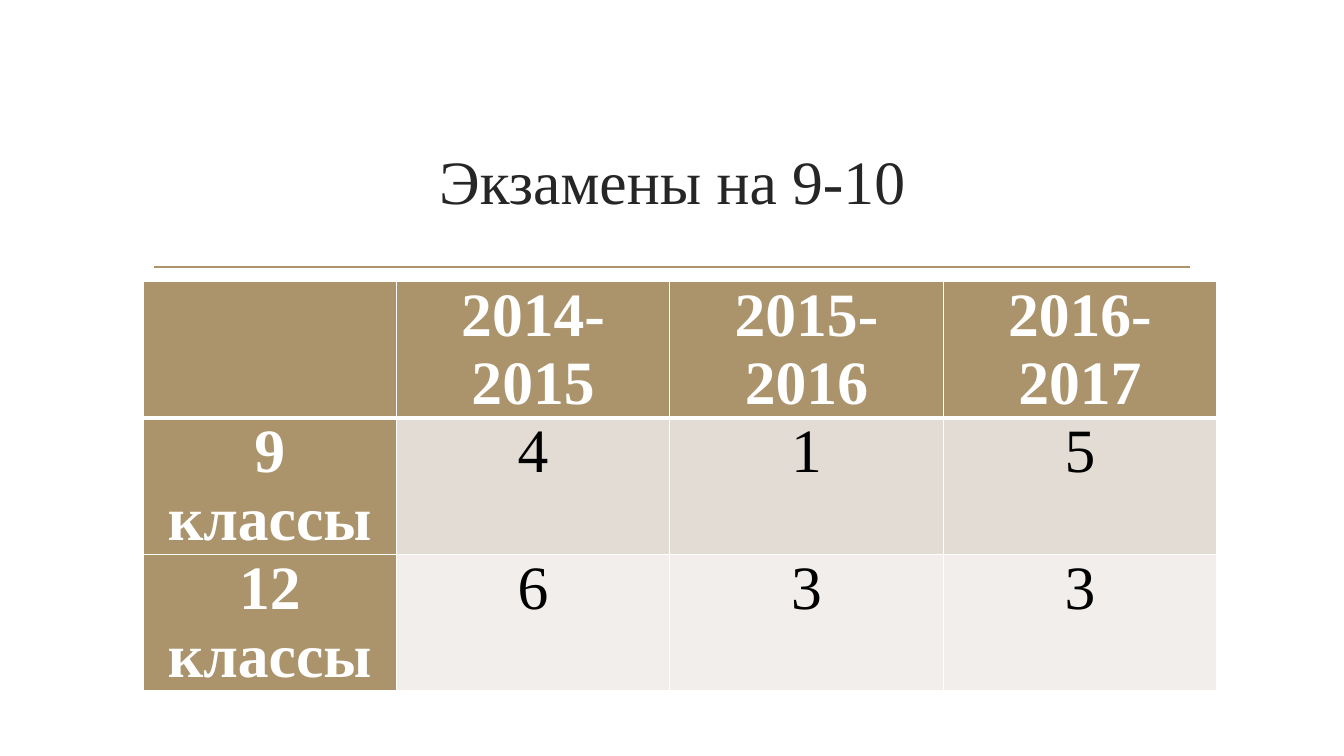
import pptx
import pptx.dml.color
import pptx.enum.shapes
import pptx.enum.text
import pptx.oxml
import pptx.oxml.ns
import pptx.util

Cm, Pt = pptx.util.Cm, pptx.util.Pt
CENTER = pptx.enum.text.PP_ALIGN.CENTER
FONT = "Times New Roman"
COLORS = {
    "title": "262626",
    "accent": "AB946B",
    "band_dark": "E2DCD4",
    "band_light": "F1EEEB",
    "white": "FFFFFF",
    "black": "000000",
}
RESULTS = [
    ["", "2014-2015", "2015-2016", "2016-2017"],
    ["9 классы", "4", "1", "5"],
    ["12 классы", "6", "3", "3"],
]


def rgb(name):
    return pptx.dml.color.RGBColor.from_string(COLORS[name])


def style_paragraph(paragraph, color, bold):
    paragraph.alignment = CENTER
    paragraph.font.name = FONT
    paragraph.font.size = Pt(44)
    paragraph.font.bold = bold
    paragraph.font.color.rgb = rgb(color)


def set_borders(cell, bottom_width):
    # Border elements come before the fill, in the order L, R, T, B
    properties = cell._tc.get_or_add_tcPr()
    widths = {"L": 1, "R": 1, "T": 1, "B": bottom_width}
    for index, (side, width) in enumerate(widths.items()):
        properties.insert(index, pptx.oxml.parse_xml(
            f'<a:ln{side} {pptx.oxml.ns.nsdecls("a")} w="{Pt(width)}"><a:solidFill>'
            f'<a:srgbClr val="{COLORS["white"]}"/></a:solidFill></a:ln{side}>'))


def add_heading(slide, left, top, width, height):
    heading = slide.shapes.title
    heading.left, heading.top, heading.width, heading.height = left, top, width, height
    frame = heading.text_frame
    frame.text = "Экзамены на 9-10"
    frame.word_wrap = True
    frame.vertical_anchor = pptx.enum.text.MSO_ANCHOR.MIDDLE
    style_paragraph(frame.paragraphs[0], "title", False)


def add_rule(slide, left, top, width):
    rule = slide.shapes.add_connector(
        pptx.enum.shapes.MSO_CONNECTOR.STRAIGHT, left, top, left + width, top)
    rule.line.color.rgb = rgb("accent")
    rule.line.width = Pt(1.25)
    rule._element.spPr.append(
        pptx.oxml.parse_xml(f'<a:effectLst {pptx.oxml.ns.nsdecls("a")}/>'))


def add_results(slide, left, top, width, height):
    row_count, column_count = len(RESULTS), len(RESULTS[0])
    table = slide.shapes.add_table(
        row_count, column_count, left, top, width, height).table
    table.first_col = True

    # The label column is slightly narrower than the year columns
    label_width = Cm(6.38)
    year_width = (width - label_width) // (column_count - 1)
    for index, column in enumerate(table.columns):
        column.width = year_width if index else label_width

    for r, values in enumerate(RESULTS):
        for c, value in enumerate(values):
            cell = table.cell(r, c)
            is_header = r == 0 or c == 0
            band = "band_dark" if r % 2 else "band_light"
            cell.fill.solid()
            cell.fill.fore_color.rgb = rgb("accent" if is_header else band)
            set_borders(cell, 3 if r == 0 else 1)
            cell.margin_left = cell.margin_right = Cm(0.18)
            cell.margin_top = cell.margin_bottom = 0
            cell.text = value
            style_paragraph(cell.text_frame.paragraphs[0],
                            "white" if is_header else "black", is_header)


def main():
    deck = pptx.Presentation()
    deck.slide_width, deck.slide_height = Cm(33.87), Cm(19.05)
    slide = deck.slides.add_slide(deck.slide_layouts.get_by_name("Title Only"))
    add_rule(slide, Cm(3.89), Cm(6.73), Cm(26.11))
    add_heading(slide, Cm(3.61), Cm(2.72), Cm(26.67), Cm(3.63))
    add_results(slide, Cm(3.61), Cm(7.09), Cm(27.05), Cm(10.15))
    deck.save("out.pptx")


if __name__ == "__main__":
    main()
